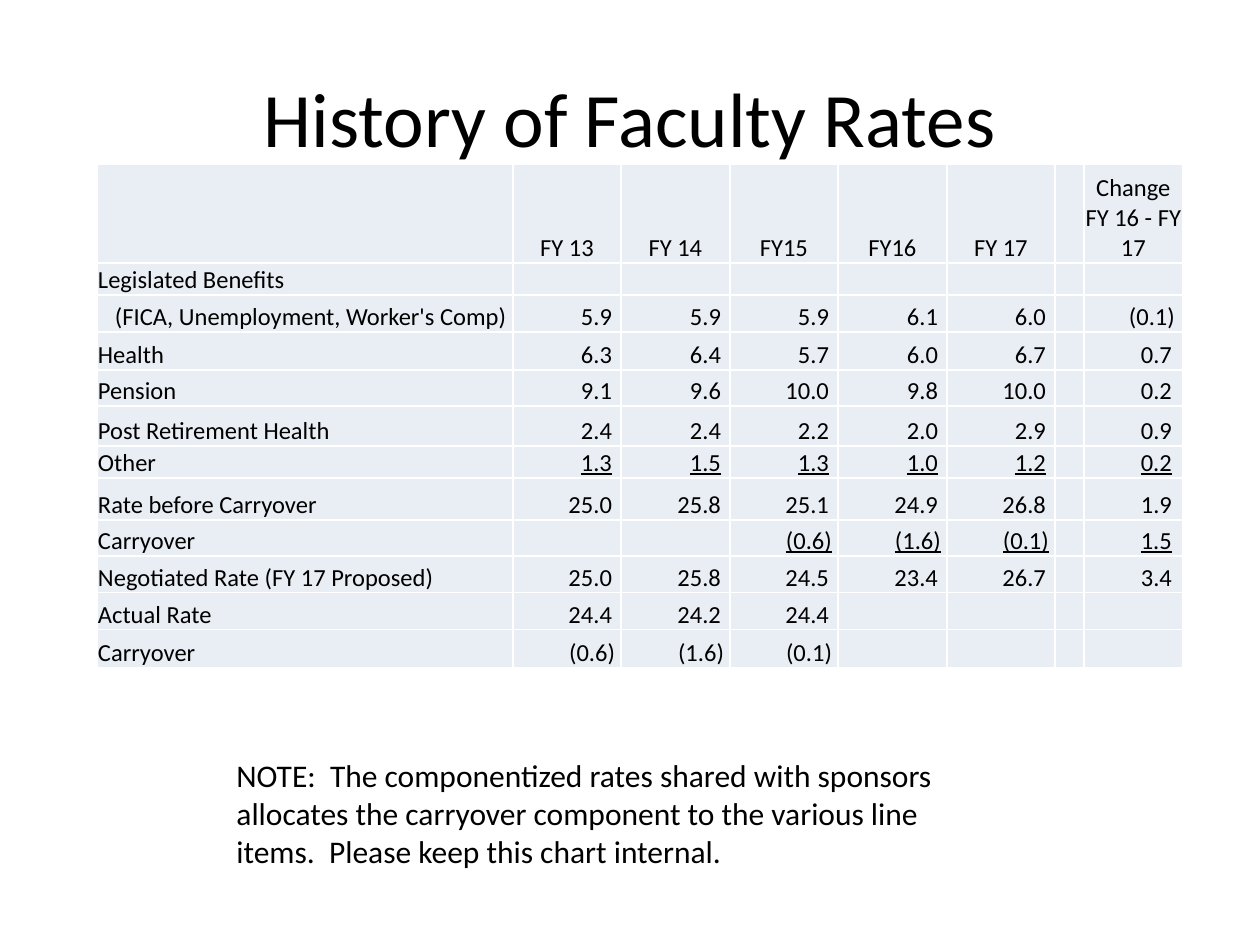
from lxml import etree
from pptx import Presentation
from pptx.dml.color import RGBColor
from pptx.enum.text import MSO_ANCHOR as Anchor, PP_ALIGN as Align
from pptx.oxml.ns import qn
from pptx.util import Emu, Pt

PX_PER_INCH = 126
COLORS = {"text": "000000", "cell": "E9EDF4"}

COLUMN_WIDTHS = [416, 108, 109, 108, 109, 108, 29, 99]
ROW_HEIGHTS = [99, 32, 37, 38, 36, 40, 32, 42, 36, 37, 37, 38]
GAP_COLUMN = 6
HEADER = ["", "FY 13", "FY 14", "FY15", "FY16", "FY 17", "Change FY 16 - FY 17"]
RATES = [
    ["Legislated Benefits"],
    ["(FICA, Unemployment, Worker's Comp)", "5.9", "5.9", "5.9", "6.1", "6.0", "(0.1)"],
    ["Health", "6.3", "6.4", "5.7", "6.0", "6.7", "0.7"],
    ["Pension", "9.1", "9.6", "10.0", "9.8", "10.0", "0.2"],
    ["Post Retirement Health", "2.4", "2.4", "2.2", "2.0", "2.9", "0.9"],
    ["Other", "1.3", "1.5", "1.3", "1.0", "1.2", "0.2"],
    ["Rate before Carryover", "25.0", "25.8", "25.1", "24.9", "26.8", "1.9"],
    ["Carryover", "", "", "(0.6)", "(1.6)", "(0.1)", "1.5"],
    ["Negotiated Rate (FY 17 Proposed)", "25.0", "25.8", "24.5", "23.4", "26.7", "3.4"],
    ["Actual Rate", "24.4", "24.2", "24.4"],
    ["Carryover", "(0.6)", "(1.6)", "(0.1)"],
]
INDENTED_ROW = 2
UNDERLINED_ROWS = (6, 8)


def px(length):
    return Emu(round(length * 914400 / PX_PER_INCH))


class SlideBuilder:
    def __init__(self, page, font="Calibri"):
        self.page = page
        self.font = font

    def style(self, para, size, align=Align.LEFT):
        para.alignment = align
        para.font.name = self.font
        para.font.size = Pt(size)
        para.font.color.rgb = RGBColor.from_string(COLORS["text"])

    def text(self, left, top, width, height, words, size,
             align=Align.LEFT, anchor=Anchor.TOP):
        box = self.page.shapes.add_textbox(px(left), px(top), px(width), px(height))
        frame = box.text_frame
        frame.word_wrap = True
        frame.vertical_anchor = anchor
        frame.text = words
        self.style(frame.paragraphs[0], size, align)

    def table(self, left, top, widths, heights):
        frame = self.page.shapes.add_table(
            len(heights), len(widths), px(left), px(top), px(sum(widths)), px(sum(heights)))
        table = frame.table
        table.first_row = table.horz_banding = False
        for column, width in zip(table.columns, widths):
            column.width = px(width)
        for row, height in zip(table.rows, heights):
            row.height = px(height)
        for cell in table.iter_cells():
            cell.fill.solid()
            cell.fill.fore_color.rgb = RGBColor.from_string(COLORS["cell"])
            cell.vertical_anchor = Anchor.BOTTOM
            cell.margin_left = cell.margin_right = cell.margin_top = px(1)
            cell.margin_bottom = 0
            self.style(cell.text_frame.paragraphs[0], 14)
        return table

    def label(self, cell, words, align=Align.LEFT, indent=1):
        para = cell.text_frame.paragraphs[0]
        para.text = words
        para.alignment = align
        cell.margin_left = px(indent)

    def number(self, cell, value, width, inset):
        # A closing bracket hangs past the digits
        self.label(cell, value, Align.RIGHT)
        cell.margin_right = px(inset - 3 if value.endswith(")") else inset)

    def underlined_number(self, cell, value, width, inset):
        # The underlined tab carries the rule across the cell
        para = cell.text_frame.paragraphs[0]
        edge = width - 1 - (inset - 3 if value.endswith(")") else inset)
        properties = para._p.get_or_add_pPr()
        tabs = etree.Element(qn("a:tabLst"))
        etree.SubElement(tabs, qn("a:tab"), pos=str(px(edge)), algn="r")
        properties.insert(0, tabs)
        para.text = "\t" + value
        para.runs[0].font.underline = True


def main():
    deck = Presentation()
    deck.slide_width, deck.slide_height = px(1260), px(945)
    page = deck.slides.add_slide(deck.slide_layouts[6])
    builder = SlideBuilder(page)

    # Title
    builder.text(63, 38, 1134, 157, "History of Faculty Rates", 44,
                 Align.CENTER, Anchor.MIDDLE)

    # Rate table, with an empty column before the change
    table = builder.table(97, 164, COLUMN_WIDTHS, ROW_HEIGHTS)
    for row, values in enumerate([HEADER] + RATES):
        for index, value in enumerate(values):
            column = index if index < GAP_COLUMN else index + 1
            cell = table.cell(row, column)
            if not value:
                continue
            if row == 0:
                builder.label(cell, value, Align.CENTER)
            elif column == 0:
                builder.label(cell, value, indent=18 if row == INDENTED_ROW else 1)
            else:
                write = (builder.underlined_number if row in UNDERLINED_ROWS
                         else builder.number)
                write(cell, value, COLUMN_WIDTHS[column], 11 if column > GAP_COLUMN else 9)

    # Note
    builder.text(224, 750, 790, 127,
                 "NOTE:  The componentized rates shared with sponsors allocates the "
                 "carryover component to the various line items.  Please keep this "
                 "chart internal.", 18)

    deck.save("out.pptx")


if __name__ == "__main__":
    main()
